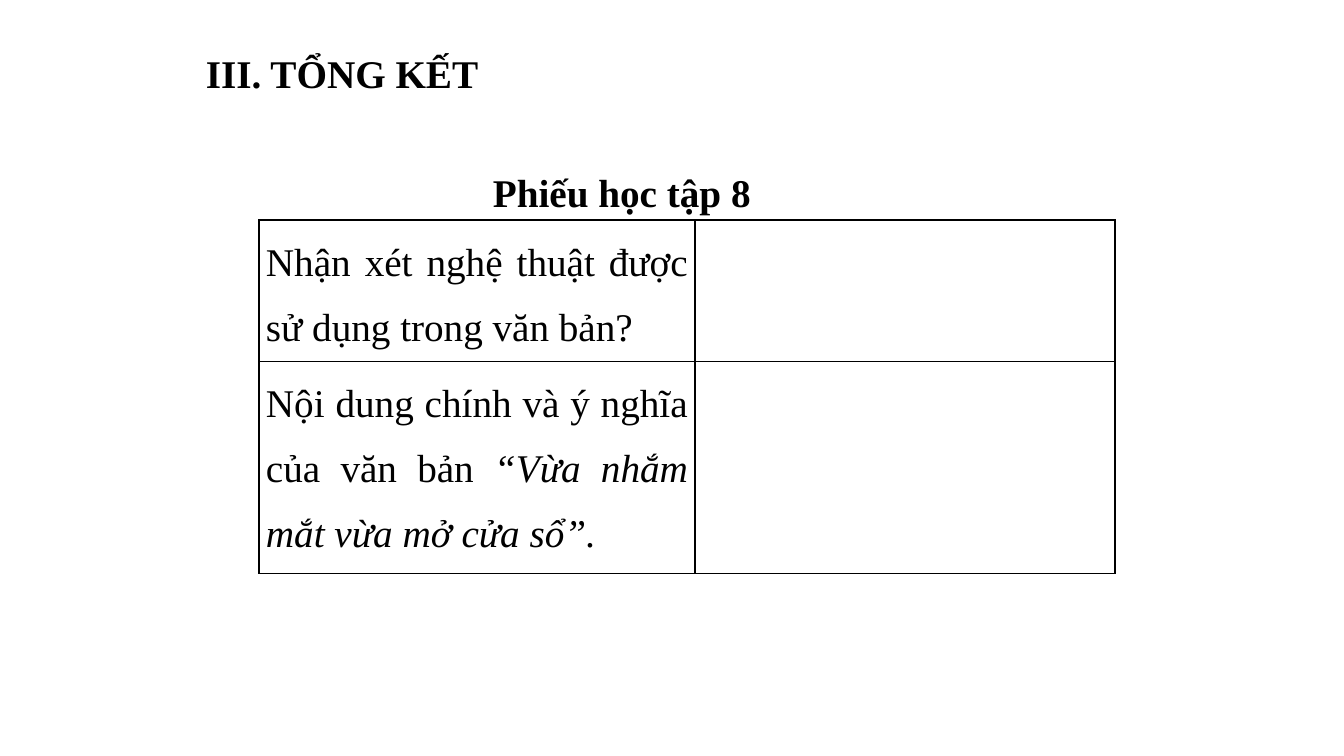
from lxml import etree
from pptx import Presentation
from pptx import util as u
from pptx.dml.color import RGBColor
from pptx.enum import text
from pptx.oxml import ns

EMU_PER_PX = 914400 / 100.8
BLACK = RGBColor(0x00, 0x00, 0x00)
WHITE = RGBColor(0xFF, 0xFF, 0xFF)
FONT = "Times New Roman"
COLUMN_WIDTHS = [436, 420]
ROW_HEIGHTS = [141, 212]
# Each question is a list of (words, italic) pieces.
QUESTIONS = [
    [("Nhận xét nghệ thuật được sử dụng trong văn bản?", False)],
    [("Nội dung chính và ý nghĩa của văn bản ", False),
     ("“Vừa nhắm mắt vừa mở cửa sổ”.", True)],
]


def px(length):
    return u.Emu(round(length * EMU_PER_PX))


def style_run(run, bold=False, italic=False):
    run.font.name = FONT
    run.font.size = u.Pt(28)
    run.font.bold = bold
    run.font.italic = italic
    run.font.color.rgb = BLACK


def justify(paragraph):
    paragraph.alignment = text.PP_ALIGN.JUSTIFY
    paragraph.line_spacing = 1.5


def add_heading(slide, words, box, wrap=True):
    """Add a bold line of text in box and return its paragraph."""
    frame = slide.shapes.add_textbox(*map(px, box)).text_frame
    frame.word_wrap = wrap
    frame.auto_size = text.MSO_AUTO_SIZE.SHAPE_TO_FIT_TEXT
    heading = frame.paragraphs[0]
    heading.text = words
    style_run(heading.runs[0], bold=True)
    return heading


def outline_cell(cell):
    properties = cell._tc.get_or_add_tcPr()
    for side in ("lnL", "lnR", "lnT", "lnB"):
        border = etree.SubElement(properties, ns.qn(f"a:{side}"), w=str(u.Pt(1)))
        fill = etree.SubElement(border, ns.qn("a:solidFill"))
        etree.SubElement(fill, ns.qn("a:srgbClr"), val=str(BLACK))


def add_worksheet(slide, left, top):
    """Add the table of questions with an empty answer column."""
    frame = slide.shapes.add_table(
        len(ROW_HEIGHTS), len(COLUMN_WIDTHS), px(left), px(top),
        px(sum(COLUMN_WIDTHS)), px(sum(ROW_HEIGHTS)))
    worksheet = frame.table
    worksheet.first_row = False
    worksheet.horz_banding = False
    for column, width in zip(worksheet.columns, COLUMN_WIDTHS):
        column.width = px(width)
    for row, height in zip(worksheet.rows, ROW_HEIGHTS):
        row.height = px(height)
    for cell in worksheet.iter_cells():
        outline_cell(cell)
        cell.fill.background()
        cell.margin_left = cell.margin_right = px(7)
        cell.margin_top = cell.margin_bottom = 0
    for row, pieces in enumerate(QUESTIONS):
        question = worksheet.cell(row, 0).text_frame.paragraphs[0]
        justify(question)
        for words, italic in pieces:
            run = question.add_run()
            run.text = words
            style_run(run, italic=italic)


def main():
    deck = Presentation()
    deck.slide_width, deck.slide_height = px(1344), px(756)
    slide = deck.slides.add_slide(deck.slide_layouts[6])
    slide.background.fill.solid()
    slide.background.fill.fore_color.rgb = WHITE
    add_heading(slide, "III. TỔNG KẾT", (196, 44, 555, 57))
    justify(add_heading(slide, "Phiếu học tập 8", (483, 140, 281, 74), wrap=False))
    add_worksheet(slide, 259, 220)
    deck.save("out.pptx")


if __name__ == "__main__":
    main()
